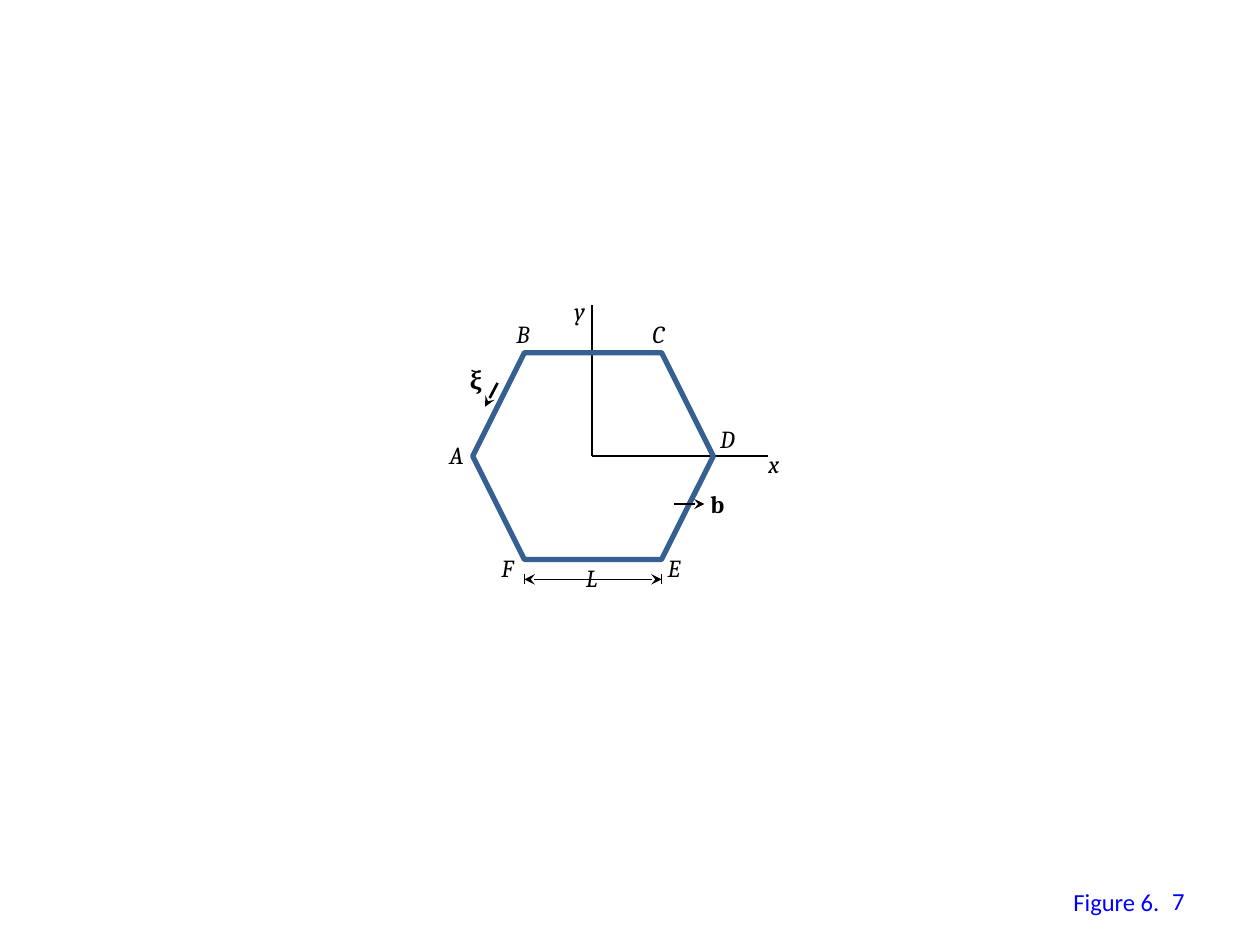
from lxml import etree
from pptx import Presentation
from pptx.dml.color import RGBColor
from pptx.enum.shapes import MSO_CONNECTOR, MSO_SHAPE
from pptx.enum.text import MSO_ANCHOR, MSO_AUTO_SIZE, PP_ALIGN
from pptx.oxml.ns import qn
from pptx.util import Cm, Pt

STRAIGHT = MSO_CONNECTOR.STRAIGHT
HEXAGON = MSO_SHAPE.HEXAGON
MIDDLE = MSO_ANCHOR.MIDDLE
GROW = MSO_AUTO_SIZE.SHAPE_TO_FIT_TEXT
RIGHT = PP_ALIGN.RIGHT

COLORS = {"ink": "000000", "edge": "376092", "note": "0000FF"}
MATH, PLAIN = "Cambria", "Calibri"
ROW = 0.86  # height of a one-line label, cm

# Hexagon frame and its lower side, cm
LEFT, TOP, WIDE, HIGH = 9.53, 7.11, 4.85, 4.17
MID_X, MID_Y = 11.94, 9.2
SIDE_L, SIDE_R = LEFT + HIGH / 4, LEFT + WIDE - HIGH / 4

# Label: left, top, width
NAMES = {
    "x": (15.24, 8.92, 0.86),
    "y": (11.33, 5.84, 0.86),
    "D": (14.27, 8.43, 1.02),
    "E": (13.21, 11.02, 0.94),
    "F": (9.86, 11.02, 0.94),
    "A": (8.81, 8.74, 0.94),
    "B": (10.16, 6.3, 0.94),
    "C": (12.9, 6.3, 0.99),
    "L": (11.56, 11.23, 0.91),
}
VECTORS = {"ξ": (9.22, 7.24, 0.76), "b": (14.07, 9.73, 0.79)}


def color(name):
    return RGBColor.from_string(COLORS[name])


def add_line(slide, start, end, width=1, head=False, tail=False):
    line = slide.shapes.add_connector(
        STRAIGHT, *(Cm(value) for value in (*start, *end)))
    line.line.color.rgb = color("ink")
    line.line.width = Pt(width)
    # Arrowheads
    ln = line.line._get_or_add_ln()
    for tag, shown in (("a:headEnd", head), ("a:tailEnd", tail)):
        if shown:
            etree.SubElement(ln, qn(tag), type="stealth")
    etree.SubElement(line._element.spPr, qn("a:effectLst"))


def add_text(slide, text, place, high=ROW, font=MATH, tint="ink",
             bold=False, slant=False, wrap=False):
    left, top, wide = place
    box = slide.shapes.add_textbox(Cm(left), Cm(top), Cm(wide), Cm(high))
    frame = box.text_frame
    frame.word_wrap = wrap
    if not wrap:
        frame.auto_size = GROW
    run = frame.paragraphs[0].add_run()
    run.text = text
    run.font.name = font
    run.font.size = Pt(14)
    run.font.bold = bold
    run.font.italic = slant
    run.font.color.rgb = color(tint)
    return frame


def add_hexagon(slide):
    shape = slide.shapes.add_shape(
        HEXAGON, Cm(LEFT), Cm(TOP), Cm(WIDE), Cm(HIGH))
    shape.shadow.inherit = False
    shape.fill.background()
    shape.line.color.rgb = color("edge")
    shape.line.width = Pt(3)


def add_span(slide):
    y, half = 11.68, 0.1
    for x in (SIDE_L, SIDE_R):
        add_line(slide, (x, y - half), (x, y + half))
    add_line(slide, (SIDE_R, y), (SIDE_L, y), head=True, tail=True)


def main():
    deck = Presentation()
    deck.slide_width, deck.slide_height = Cm(25.4), Cm(19.05)
    slide = deck.slides.add_slide(deck.slide_layouts[6])

    # Axes, then the loop over them
    add_line(slide, (MID_X, 6.15), (MID_X, MID_Y))
    add_line(slide, (15.49, MID_Y), (MID_X, MID_Y))
    add_hexagon(slide)

    # Direction arrows
    add_line(slide, (13.59, 10.16), (14.2, 10.16), 1.5, tail=True)
    add_line(slide, (10.03, 7.72), (9.78, 8.2), 1.5, tail=True)

    # Length of the lower side
    add_span(slide)

    # Labels
    for name, place in NAMES.items():
        add_text(slide, name, place, slant=True)
    for name, place in VECTORS.items():
        add_text(slide, name, place, bold=True)

    # Figure number
    add_text(slide, "Figure 6.", (21.39, 17.75, 2.26), font=PLAIN, tint="note")
    page = add_text(slide, "7", (18.21, 17.65, 5.92), high=1.02,
                    font=PLAIN, tint="note", wrap=True)
    page.vertical_anchor = MIDDLE
    page.paragraphs[0].alignment = RIGHT

    deck.save("out.pptx")


if __name__ == "__main__":
    main()
